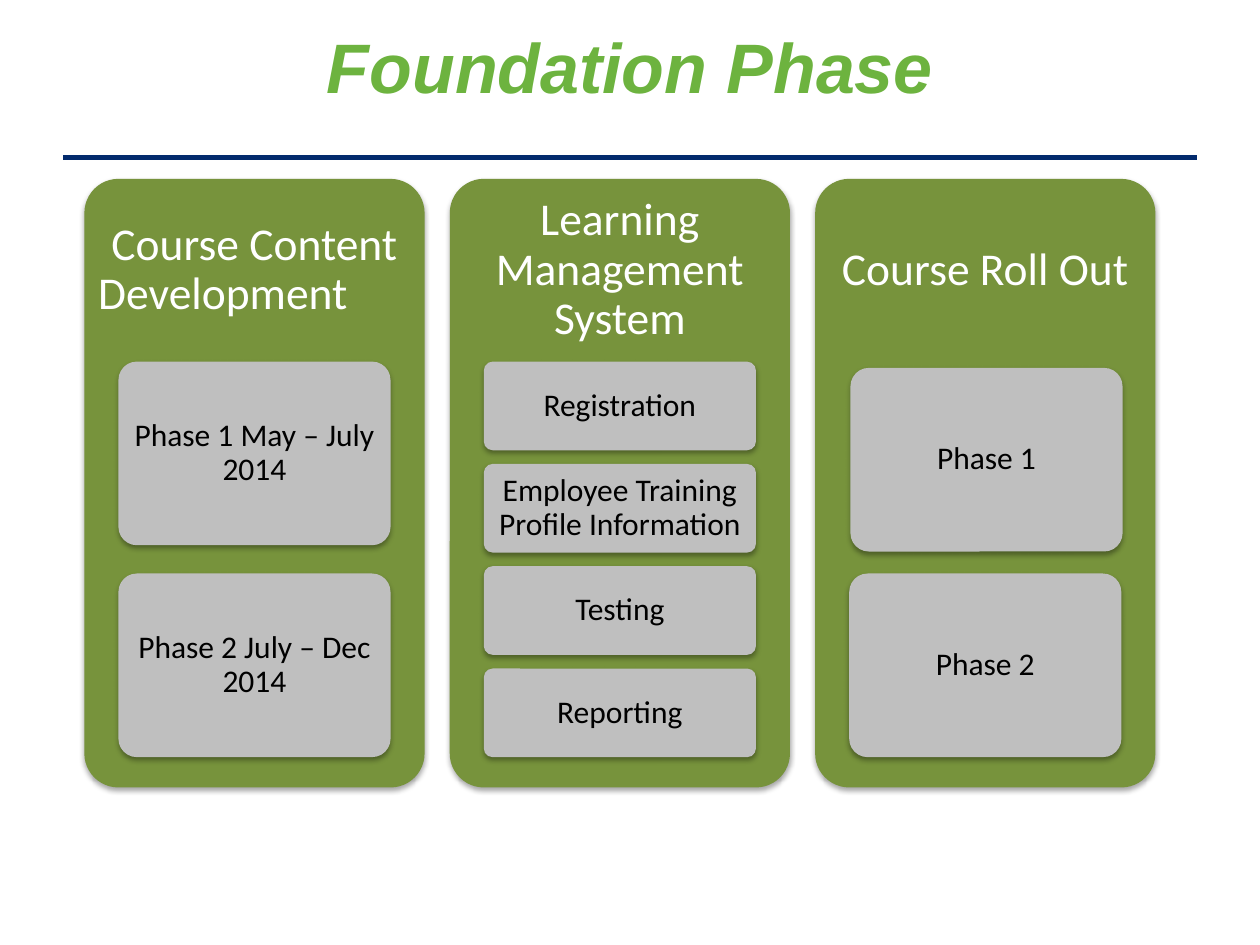
from dataclasses import dataclass

from lxml.etree import SubElement
from pptx import Presentation
from pptx.dml.color import RGBColor
from pptx.enum.shapes import MSO_CONNECTOR, MSO_SHAPE
from pptx.enum.text import MSO_ANCHOR as Anchor, PP_ALIGN as Align
from pptx.oxml.ns import qn
from pptx.util import Emu, Inches, Pt

COLORS = {
    "title": "6DB33F",
    "rule": "032B6D",
    "panel": "77933C",
    "card": "BFBFBF",
    "light": "FFFFFF",
    "dark": "000000",
}

deck = Presentation()
deck.slide_width, deck.slide_height = Inches(10), Inches(7.5)
COLUMN = deck.slide_width / 100
ROW = deck.slide_height / 75

PANEL_LEFT, PANEL_TOP, PANEL_WIDTH, PANEL_HEIGHT = 6.7, 14.2, 27, 48.3
PANEL_PITCH = 29
HEADING_HEIGHT = 14.5
CARD_WIDTH = PANEL_WIDTH * 0.8
CARD_INDENT = PANEL_WIDTH * 0.1
CARD_TOP = PANEL_TOP + HEADING_HEIGHT
CARDS_HEIGHT = PANEL_HEIGHT * 0.65
GAP_SHARE = 2 / 13


@dataclass
class Area:
    left: float
    top: float
    width: float
    height: float

    def lengths(self) -> tuple:
        return (Emu(round(self.left * COLUMN)), Emu(round(self.top * ROW)),
                Emu(round(self.width * COLUMN)), Emu(round(self.height * ROW)))


@dataclass
class Card:
    text: str
    shift_right: float = 0
    shift_down: float = 0


@dataclass
class Panel:
    heading: str
    cards: list[Card]


PANELS = [
    Panel("Course Content Development \t",
          [Card("Phase 1 May – July 2014"), Card("Phase 2 July – Dec 2014")]),
    Panel("Learning Management System",
          [Card("Registration"), Card("Employee Training Profile Information"),
           Card("Testing"), Card("Reporting")]),
    Panel("Course Roll Out",
          [Card("Phase 1", 0.1, 0.5), Card("Phase 2")]),
]


def color(name: str) -> RGBColor:
    return RGBColor.from_string(COLORS[name])


def add_shadow(shape) -> None:
    shape.shadow.inherit = False
    effects = shape._element.spPr.find(qn("a:effectLst"))
    shadow = SubElement(effects, qn("a:outerShdw"), blurRad=str(Pt(3.1)),
                        dist=str(Pt(1.8)), dir="5400000", rotWithShape="0")
    tint = SubElement(shadow, qn("a:srgbClr"), val=COLORS["dark"])
    SubElement(tint, qn("a:alpha"), val="35000")


def add_block(page, area: Area, fill: str):
    block = page.shapes.add_shape(MSO_SHAPE.ROUNDED_RECTANGLE, *area.lengths())
    block.adjustments[0] = 0.1
    block.fill.solid()
    block.fill.fore_color.rgb = color(fill)
    block.line.fill.background()
    add_shadow(block)
    return block


def write(box, text: str, size: int, ink: str, side: float, edge: float) -> None:
    frame = box.text_frame
    frame.word_wrap = True
    frame.vertical_anchor = Anchor.MIDDLE
    frame.margin_left = frame.margin_right = Inches(side)
    frame.margin_top = frame.margin_bottom = Inches(edge)
    para = frame.paragraphs[0]
    para.text = text
    para.alignment = Align.CENTER
    para.line_spacing = 0.9
    para.font.name = "Calibri"
    para.font.size = Pt(size)
    para.font.color.rgb = color(ink)


def add_title(page, text: str) -> None:
    title = page.shapes.title
    title.left, title.top, title.width, title.height = Area(5, 0.8, 90, 10).lengths()
    frame = title.text_frame
    frame.vertical_anchor = Anchor.TOP
    frame.margin_top = Inches(0.11)
    para = frame.paragraphs[0]
    para.text = text
    para.alignment = Align.CENTER
    para.font.name = "Arial"
    para.font.size = Pt(40)
    para.font.bold = para.font.italic = True
    para.font.color.rgb = color("title")


def add_rule(page) -> None:
    left, top, width, _ = Area(5, 12.5, 90, 0).lengths()
    rule = page.shapes.add_connector(MSO_CONNECTOR.STRAIGHT, left, top, left + width, top)
    rule.line.color.rgb = color("rule")
    rule.line.width = Pt(3)
    SubElement(rule._element.spPr, qn("a:effectLst"))


def add_panel(page, index: int, panel: Panel) -> None:
    left = PANEL_LEFT + index * PANEL_PITCH
    add_block(page, Area(left, PANEL_TOP, PANEL_WIDTH, PANEL_HEIGHT), "panel")
    heading = page.shapes.add_textbox(
        *Area(left, PANEL_TOP, PANEL_WIDTH, HEADING_HEIGHT).lengths())
    write(heading, panel.heading, 26, "light", 0.11, 0.11)

    count = len(panel.cards)
    height = CARDS_HEIGHT / (count + (count - 1) * GAP_SHARE)
    for position, card in enumerate(panel.cards):
        top = CARD_TOP + position * height * (1 + GAP_SHARE)
        area = Area(left + CARD_INDENT + card.shift_right, top + card.shift_down,
                    CARD_WIDTH, height)
        write(add_block(page, area, "card"), card.text, 18, "dark", 0.05, 0.04)


def main() -> None:
    page = deck.slides.add_slide(deck.slide_layouts[5])
    add_rule(page)
    add_title(page, "Foundation Phase")
    for index, panel in enumerate(PANELS):
        add_panel(page, index, panel)
    deck.save("out.pptx")


if __name__ == "__main__":
    main()
